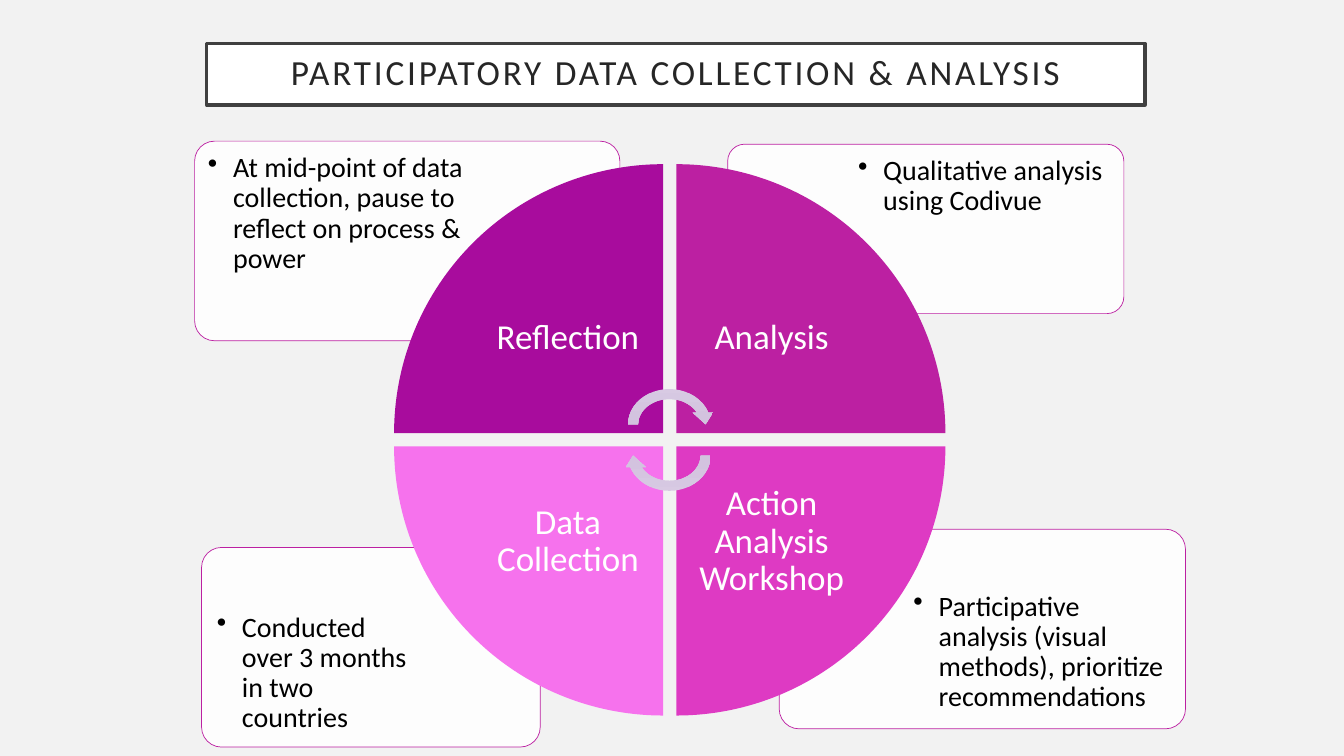
from lxml import etree
from pptx import Presentation
from pptx.dml.color import RGBColor
from pptx.enum import shapes, text
from pptx.oxml.ns import qn
from pptx.util import Pt

PAPER = RGBColor(0xF2, 0xF2, 0xF2)
WHITE = RGBColor(0xFF, 0xFF, 0xFF)
BLACK = RGBColor(0, 0, 0)
INK = RGBColor(0x26, 0x26, 0x26)
FRAME = RGBColor(0x40, 0x40, 0x40)
PURPLE = RGBColor(0xA8, 0x0C, 0x9D)
MAGENTA = RGBColor(0xBC, 0x20, 0xA2)
ROSE = RGBColor(0xDE, 0x3A, 0xC3)
PINK = RGBColor(0xF6, 0x72, 0xED)
LILAC = RGBColor(0xD8, 0xCA, 0xE3)
MAUVE = RGBColor(0xCB, 0xB8, 0xD8)

KIND = shapes.MSO_SHAPE
CENTER = text.PP_ALIGN.CENTER
LEFT = text.PP_ALIGN.LEFT
TOP = text.MSO_ANCHOR.TOP
MIDDLE = text.MSO_ANCHOR.MIDDLE

# Wheel: quarter size, step between quarters, label size
WHEEL_X, WHEEL_Y = 281.5, 117.3
SIZE, STEP, LABEL = 192.2, 201.6, 136.1

# Card box, text box, inset, wording
CARDS = [
    ((556.6, 378, 290.2, 142.6), (646.6, 416.9, 197.3, 100.8), 5.9,
     "Participative analysis (visual methods), prioritize recommendations"),
    ((144, 391, 241.9, 142.6), (146.9, 429.8, 162.7, 100.8), 8,
     "Conducted over 3 months in two countries"),
    ((519.8, 103, 283, 121), (607, 105.8, 192.2, 85.7), 5.9,
     "Qualitative analysis using Codivue"),
    ((139, 100.8, 303.8, 142.6), (142.6, 103.7, 206.6, 100.8), 5.9,
     "At mid-point of data collection, pause to reflect on process & power"),
]

# Column, row, colour, wording: clockwise from the upper left
WEDGES = [
    (0, 0, PURPLE, "Reflection"),
    (1, 0, MAGENTA, "Analysis"),
    (1, 1, ROSE, "Action Analysis Workshop"),
    (0, 1, PINK, "Data Collection"),
]


def assign(item, values):
    for name, value in values.items():
        setattr(item, name, value)


def write(shape, words, size, color, inset, align, anchor):
    frame = shape.text_frame
    frame.text = words
    assign(frame, {
        "word_wrap": True, "auto_size": text.MSO_AUTO_SIZE.NONE,
        "vertical_anchor": anchor,
        "margin_left": Pt(inset), "margin_right": Pt(inset),
        "margin_top": Pt(inset), "margin_bottom": Pt(inset),
    })
    para = frame.paragraphs[0]
    assign(para, {"alignment": align, "line_spacing": 0.9})
    font = para.runs[0].font
    assign(font, {"name": "Calibri", "size": Pt(size)})
    font.color.rgb = color
    return para


def add_shape(slide, kind, box, turn=0):
    shape = slide.shapes.add_shape(kind, *map(Pt, box))
    shape.rotation = turn
    shape.shadow.inherit = False
    shape.line.fill.background()
    return shape


def paint(shape, color):
    shape.fill.solid()
    shape.fill.fore_color.rgb = color


def outline(shape, color, width):
    shape.line.color.rgb = color
    shape.line.width = Pt(width)


def add_text(slide, box, *style):
    return write(slide.shapes.add_textbox(*map(Pt, box)), *style)


def add_bullet(para):
    props = para._p.get_or_add_pPr()
    props.set("marL", str(Pt(18)))
    props.set("indent", str(Pt(-18)))
    etree.SubElement(props, qn("a:buChar"), char="•")


def add_title(slide, words):
    title = slide.shapes.title
    assign(title, {"left": Pt(147.6), "top": Pt(31), "width": Pt(670.3),
                   "height": Pt(43.9)})
    paint(title, WHITE)
    outline(title, FRAME, 2.5)
    para = write(title, words, 25.2, INK, 14.4, CENTER, MIDDLE)
    para.runs[0]._r.get_or_add_rPr().set("spc", "200")


def add_card(slide, box, area, inset, words):
    card = add_shape(slide, KIND.ROUNDED_RECTANGLE, box)
    card.adjustments[0] = 0.1
    paint(card, WHITE)
    tint = card._element.spPr.find(qn("a:solidFill"))[0]
    etree.SubElement(tint, qn("a:alpha"), val="90000")
    outline(card, MAGENTA, 0.5)
    add_bullet(add_text(slide, area, words, 20, BLACK, inset, LEFT, TOP))


def add_wedge(slide, turn, col, row, color, words):
    x, y = WHEEL_X + col * STEP, WHEEL_Y + row * STEP
    paint(add_shape(slide, KIND.PIE_WEDGE, (x, y, SIZE, SIZE), turn), color)
    # Labels sit against the hub of the wheel
    gap = SIZE - LABEL
    box = (x + gap * (1 - col), y + gap * (1 - row), LABEL, LABEL)
    add_text(slide, box, words, 25, WHITE, 13.7, CENTER, MIDDLE)


def add_arrow(slide, top, turn):
    arrow = add_shape(slide, KIND.CIRCULAR_ARROW, (445, top, 66.2, 57.6), turn)
    arrow.fill.gradient()
    arrow.fill.gradient_angle = 270
    for stop, color in zip(arrow.fill.gradient_stops, (LILAC, MAUVE)):
        stop.color.rgb = color


def main():
    deck = Presentation()
    assign(deck, {"slide_width": Pt(960), "slide_height": Pt(540)})
    slide = deck.slides.add_slide(deck.slide_layouts.get_by_name("Title Only"))
    paint(slide.background, PAPER)

    add_title(slide, "PARTICIPATORY DATA COLLECTION & ANALYSIS")

    # Notes behind the wheel
    for card in CARDS:
        add_card(slide, *card)

    # Wheel and its cycle arrows
    for place, wedge in enumerate(WEDGES):
        add_wedge(slide, place * 90, *wedge)
    add_arrow(slide, 274.3, 0)
    add_arrow(slide, 296.6, 180)

    deck.save("out.pptx")


if __name__ == "__main__":
    main()
